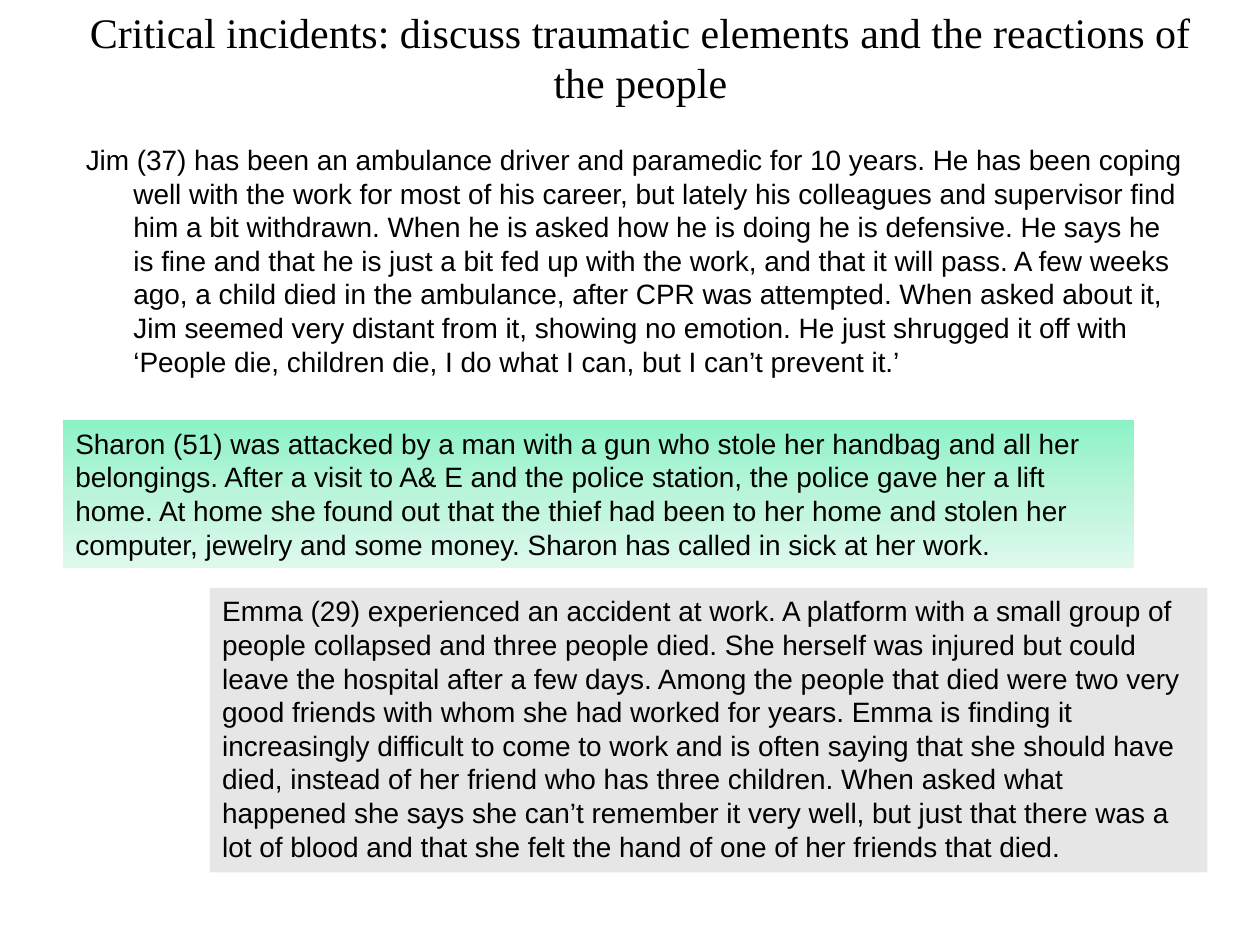
from copy import deepcopy
from pptx import Presentation
from pptx.dml.color import RGBColor
from pptx.enum.shapes import MSO_SHAPE
from pptx.enum.text import MSO_ANCHOR, MSO_AUTO_SIZE, PP_ALIGN
from pptx.oxml.ns import qn
from pptx.util import Cm, Pt

BLACK = RGBColor(0x00, 0x00, 0x00)
GREY = RGBColor(0xE6, 0xE6, 0xE6)
MINTS = [RGBColor(0x8C, 0xF2, 0xC6), RGBColor(0xBA, 0xF5, 0xDA), RGBColor(0xDE, 0xF9, 0xEC)]

JIM = (
    "Jim (37) has been an ambulance driver and paramedic for 10 years. He has been coping "
    "well with the work for most of his career, but lately his colleagues and supervisor find "
    "him a bit withdrawn. When he is asked how he is doing he is defensive. He says he "
    "is fine and that he is just a bit fed up with the work, and that it will pass. A few weeks "
    "ago, a child died in the ambulance, after CPR was attempted. When asked about it, "
    "Jim seemed very distant from it, showing no emotion. He just shrugged it off with "
    "‘People die, children die, I do what I can, but I can’t prevent it.’"
)
SHARON = (
    "Sharon (51) was attacked by a man with a gun who stole her handbag and all her "
    "belongings. After a visit to A& E and the police station, the police gave her a lift "
    "home. At home she found out that the thief had been to her home and stolen her "
    "computer, jewelry and some money. Sharon has called in sick at her work."
)
EMMA = (
    "Emma (29) experienced an accident at work. A platform with a small group of "
    "people collapsed and three people died. She herself was injured but could "
    "leave the hospital after a few days. Among the people that died were two very "
    "good friends with whom she had worked for years. Emma is finding it "
    "increasingly difficult to come to work and is often saying that she should have "
    "died, instead of her friend who has three children. When asked what "
    "happened she says she can’t remember it very well, but just that there was a "
    "lot of blood and that she felt the hand of one of her friends that died."
)


def write(shape, text, font, size, align):
    frame = shape.text_frame
    frame.word_wrap = True
    frame.auto_size = MSO_AUTO_SIZE.NONE
    frame.vertical_anchor = MSO_ANCHOR.TOP
    frame.text = text
    para = frame.paragraphs[0]
    para.alignment = align
    para.font.name = font
    para.font.size = Pt(size)
    para.font.color.rgb = BLACK
    return para


deck = Presentation()
deck.slide_width, deck.slide_height = Cm(25.4), Cm(19.05)
slide = deck.slides.add_slide(deck.slide_layouts[5])

# Title
title = slide.shapes.title
title.left, title.top, title.width, title.height = Cm(1.48), Cm(0), Cm(22.86), Cm(3.18)
write(title, "Critical incidents: discuss traumatic elements and the reactions of the people",
      "Times New Roman", 24, PP_ALIGN.CENTER)

# Three case boxes
cases = [
    (JIM, 1.48, 2.75, 22.66, 5.28),
    (SHARON, 1.27, 8.47, 21.59, 2.99),
    (EMMA, 4.23, 11.85, 20.11, 5.74),
]
boxes, paras = [], []
for text, *place in cases:
    box = slide.shapes.add_shape(MSO_SHAPE.RECTANGLE, *[Cm(n) for n in place])
    box.shadow.inherit = False
    box.line.fill.background()
    boxes.append(box)
    paras.append(write(box, text, "Arial", 16, PP_ALIGN.LEFT))
jim, sharon, emma = boxes

# Hanging indent for the first case
props = paras[0]._p.get_or_add_pPr()
props.set("marL", str(Cm(0.96)))
props.set("indent", str(Cm(-0.96)))

# Fills
for box, color in ((jim, RGBColor(0xFF, 0xFF, 0xFF)), (emma, GREY)):
    box.fill.solid()
    box.fill.fore_color.rgb = color

sharon.fill.gradient()
sharon.fill.gradient_angle = 270
stops = sharon._element.spPr.find(qn("a:gradFill")).find(qn("a:gsLst"))
stops.insert(1, deepcopy(stops[0]))
for stop, color, pos in zip(sharon.fill.gradient_stops, MINTS, (0, 0.5, 1)):
    stop.color.rgb = color
    stop.position = pos

deck.save("out.pptx")
